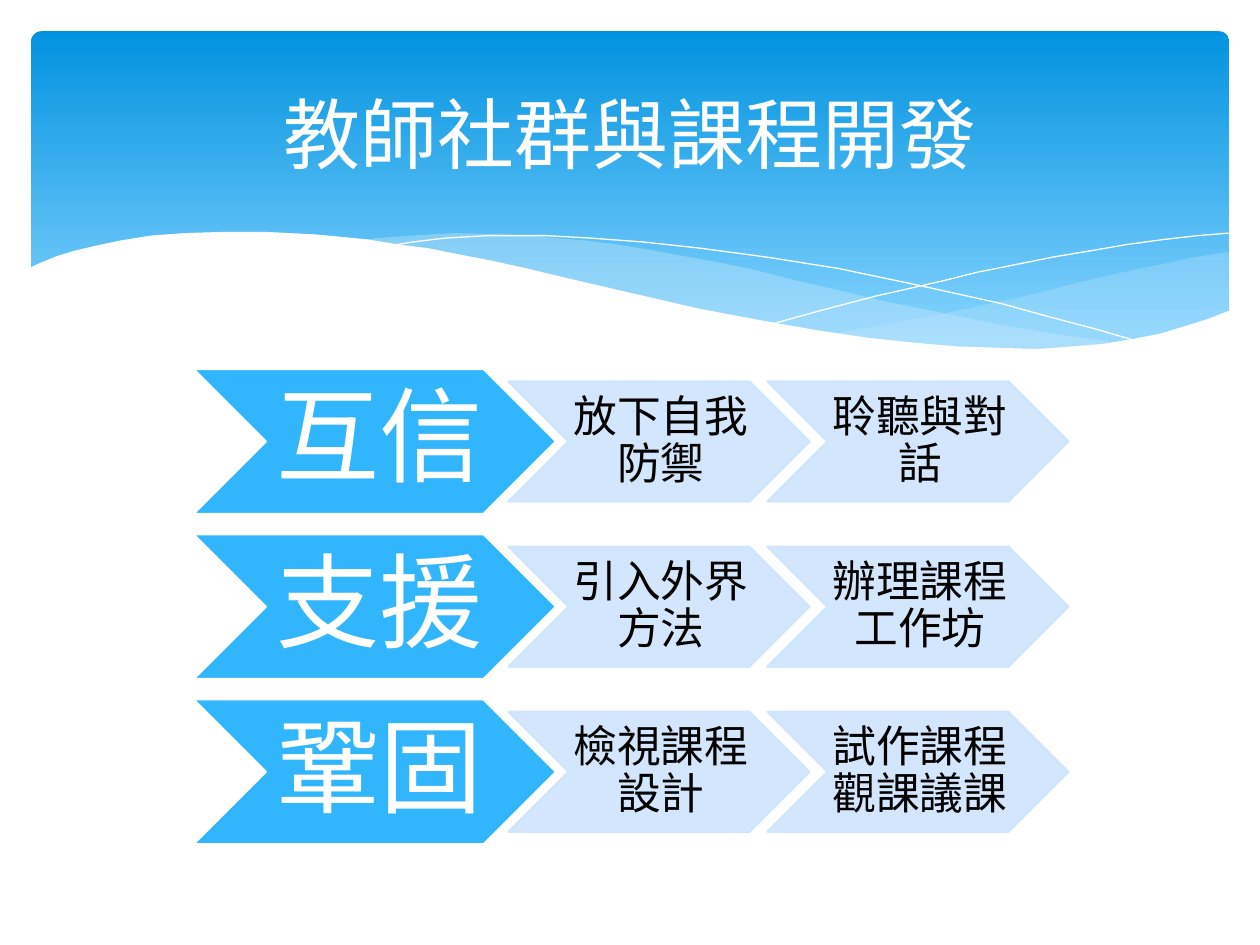
"""Build a slide of three chevron rows under a blue wave banner."""
from lxml.etree import SubElement
from pptx import Presentation
from pptx.dml.color import RGBColor
from pptx.enum.shapes import MSO_SHAPE as SHAPE
from pptx.enum.text import MSO_ANCHOR as ANCHOR, PP_ALIGN as ALIGN
from pptx.oxml.ns import qn
from pptx.util import Cm, Pt

WHITE = RGBColor(0xFF, 0xFF, 0xFF)
BLACK = RGBColor(0x00, 0x00, 0x00)
DEEP = RGBColor(0x02, 0x93, 0xE0)
SKY = RGBColor(0x83, 0xD3, 0xFE)
MIST = RGBColor(0xC6, 0xE7, 0xFC)
BLUE = RGBColor(0x31, 0xB6, 0xFD)
PALE = RGBColor(0xCE, 0xE5, 0xFE)
FONT = "Cabin"
UNIT = Cm(2.54) / 100

RIGHT_WAVE = [
    (975, 200), (948, 204), (921, 210), (891, 216), (861, 223), (805, 237), (753, 248),
    (706, 257), (661, 265), (691, 269), (719, 272), (745, 275), (769, 277), (803, 278),
    (835, 277), (863, 275), (889, 272), (913, 267), (935, 262), (949, 257), (976, 247),
    (976, 200)]
MIDDLE_WAVE = [
    (893, 273), (866, 269), (837, 265), (807, 260), (775, 254), (741, 247), (706, 240),
    (668, 231), (629, 222), (598, 214), (569, 208), (541, 203), (514, 198), (489, 194),
    (465, 191), (442, 189), (420, 187), (399, 186), (361, 185), (328, 187), (299, 189),
    (286, 191), (323, 196), (362, 203), (404, 211), (449, 222), (491, 232), (530, 240),
    (566, 248), (601, 255), (634, 261), (665, 266), (695, 270), (722, 274), (748, 276),
    (773, 277), (807, 278), (838, 278), (867, 276)]
FALLING_LINE = [
    (309, 195), (328, 192), (353, 189), (387, 187), (433, 187), (469, 189), (510, 192),
    (556, 197), (608, 204), (665, 213), (727, 226), (795, 241), (831, 251), (869, 261),
    (907, 272)]
RISING_LINE = [
    (613, 257), (653, 246), (695, 235), (748, 223), (776, 216), (806, 210), (836, 204),
    (866, 199), (895, 194), (924, 190), (951, 187), (975, 185)]
WHITE_WAVE = [
    (977, 246), (959, 253), (940, 259), (920, 265), (899, 269), (875, 273), (850, 275),
    (823, 277), (793, 276), (761, 275), (726, 272), (688, 268), (648, 262), (603, 254),
    (555, 245), (503, 233), (447, 220), (418, 213), (391, 207), (365, 202), (340, 197),
    (316, 194), (292, 190), (271, 188), (250, 186), (230, 185), (211, 184), (177, 184),
    (146, 185), (119, 187), (95, 191), (76, 195), (59, 199), (46, 203), (36, 207),
    (29, 210), (23, 213), (23, 329), (977, 329)]
WAVES = [
    (RIGHT_WAVE, MIST, 29), (MIDDLE_WAVE, MIST, 40), (FALLING_LINE, None, 100),
    (RISING_LINE, None, 100), (WHITE_WAVE, WHITE, 100)]
ROWS = [
    ("互信", "放下自我防禦", "聆聽與對話"),
    ("支援", "引入外界方法", "辦理課程工作坊"),
    ("鞏固", "檢視課程設計", "試作課程觀課議課")]


def paint(fill, color, alpha=100):
    fill.solid()
    fill.fore_color.rgb = color
    if alpha < 100:
        clr = fill._xPr.find(qn("a:solidFill"))[0]
        SubElement(clr, qn("a:alpha")).set("val", str(alpha * 1000))


def write(sp, text, size, color):
    tf = sp.text_frame
    tf.word_wrap = True
    tf.vertical_anchor = ANCHOR.MIDDLE
    p = tf.paragraphs[0]
    p.text = text
    p.alignment = ALIGN.CENTER
    p.font.size = Pt(size)
    p.font.name = FONT
    p.font.color.rgb = color
    return tf


prs = Presentation()
prs.slide_width, prs.slide_height = Cm(25.4), Cm(19.05)
s = prs.slides.add_slide(prs.slide_layouts[6])

banner = s.shapes.add_shape(SHAPE.ROUNDED_RECTANGLE, Cm(0.63), Cm(0.63), Cm(24.15), Cm(6.86))
banner.adjustments[0] = 0.03
banner.shadow.inherit = False
banner.line.fill.background()
banner.fill.gradient()
banner.fill.gradient_angle = 270
for stop, color, position in zip(banner.fill.gradient_stops, (DEEP, SKY), (0, 0.9)):
    stop.color.rgb = color
    stop.position = position

for points, color, alpha in WAVES:
    builder = s.shapes.build_freeform(*points[0], scale=UNIT)
    builder.add_line_segments(points[1:], close=color is not None)
    sp = builder.convert_to_shape()
    sp.shadow.inherit = False
    if color is None:
        sp.fill.background()
        sp.line.width = Pt(0)
        paint(sp.line.fill, WHITE)
    else:
        paint(sp.fill, color, alpha)
        sp.line.fill.background()

for row, labels in enumerate(ROWS):
    middle = 8.9 + 3.33 * row
    for col, label in enumerate(labels):
        if col == 0:
            x, w, h, size, pad = 3.9, 7.31, 2.92, 59, 0.2
            fill, edge, ink, alpha = BLUE, WHITE, WHITE, 100
        else:
            x, w, h, size, pad = 10.25 + 5.22 * (col - 1), 6.07, 2.42, 25, 0.08
            fill, edge, ink, alpha = PALE, PALE, BLACK, 90
        sp = s.shapes.add_shape(SHAPE.CHEVRON, Cm(x), Cm(middle - h / 2), Cm(w), Cm(h))
        sp.shadow.inherit = False
        paint(sp.fill, fill, alpha)
        paint(sp.line.fill, edge, alpha)
        sp.line.width = Pt(1.25)
        tf = write(sp, label, size, ink)
        tf.margin_left, tf.margin_right = Cm(pad), 0
        tf.margin_top = tf.margin_bottom = Cm(pad / 2)
        tf.paragraphs[0].line_spacing = 0.9

title = s.shapes.add_textbox(Cm(1.27), Cm(0.94), Cm(22.86), Cm(3.48))
write(title, "教師社群與課程開發", 44, WHITE)

prs.save("out.pptx")
